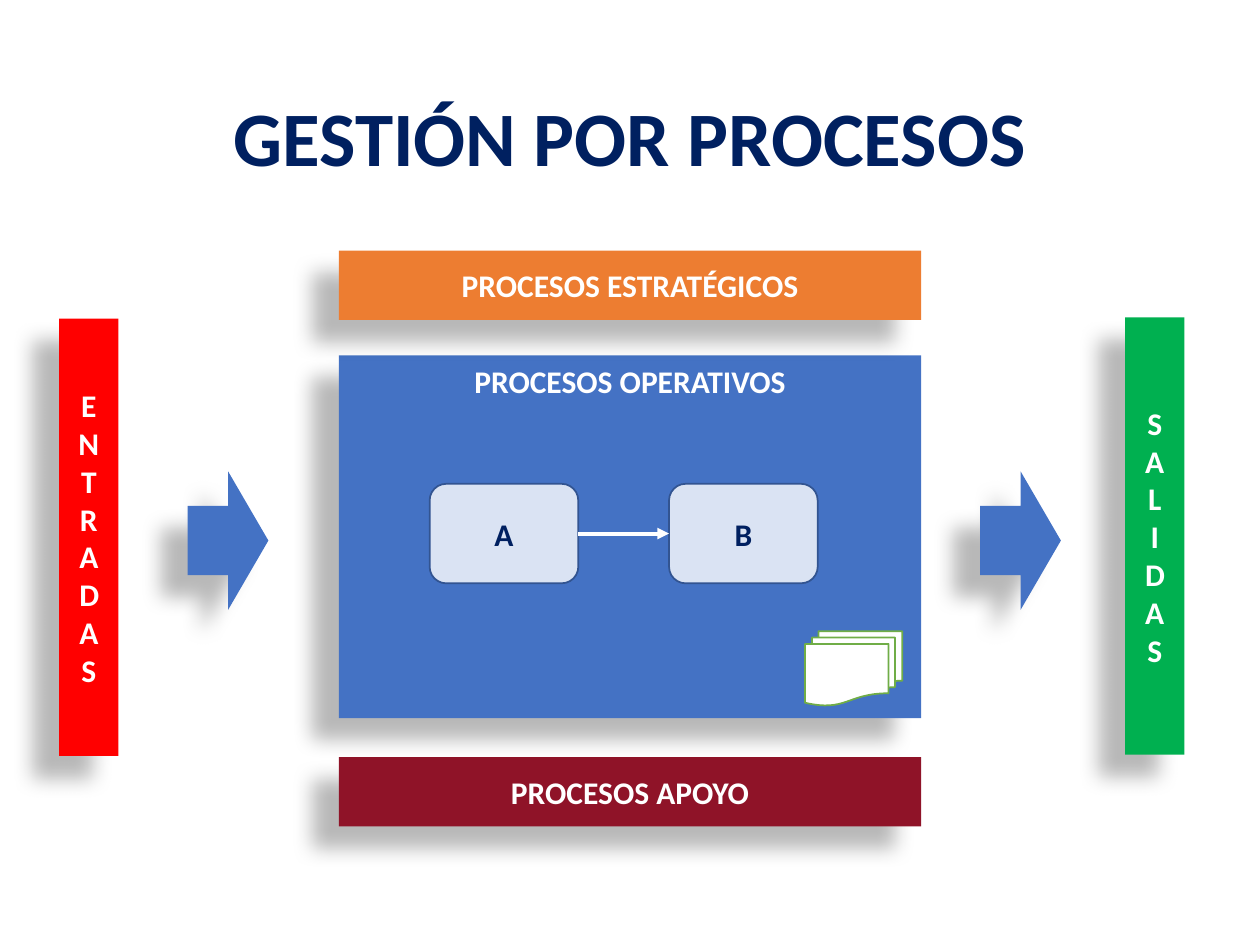
from pptx import Presentation
from pptx.dml.color import RGBColor
from pptx.enum.shapes import MSO_CONNECTOR, MSO_SHAPE as Shape
from pptx.enum.text import MSO_ANCHOR as Anchor, PP_ALIGN as Align
from pptx.oxml.ns import qn
from pptx.util import Inches, Pt
from lxml.etree import SubElement

THEME = {
    "font": "Calibri", "title_size": 44, "label_size": 18,
    "navy": "002060", "white": "FFFFFF", "blue": "4472C4", "orange": "ED7D31",
    "maroon": "8F1328", "red": "FF0000", "green": "00B050",
    "pale": "DAE3F3", "outline": "325491", "leaf": "70AD47", "shadow": "000000",
}
SHADOW = {"blurRad": Pt(11.8), "dist": Pt(19.7), "dir": 141 * 60000, "algn": "tl", "rotWithShape": 0}

presentation = Presentation()
presentation.slide_width, presentation.slide_height = Inches(10), Inches(7.5)
slide = presentation.slides.add_slide(presentation.slide_layouts[6])
COLUMN = presentation.slide_width / 100
ROW = presentation.slide_height / 100


def cells(left, top, width, height):
    return [round(n * unit) for n, unit in zip((left, top, width, height), (COLUMN, ROW) * 2)]


def write(shape, text, color, size="label_size", anchor=Anchor.MIDDLE):
    frame = shape.text_frame
    frame.word_wrap, frame.vertical_anchor = True, anchor
    paragraph = frame.paragraphs[0]
    paragraph.text, paragraph.alignment = text, Align.CENTER
    font = paragraph.runs[0].font
    for name, value in {"name": THEME["font"], "size": Pt(THEME[size]), "bold": True}.items():
        setattr(font, name, value)
    font.color.rgb = RGBColor.from_string(THEME[color])
    return paragraph


BAND_LEFT, BAND_WIDTH, BAND_HEIGHT = 26.9, 46.2, 7.33
ARROW_TOP, ARROW_WIDTH, ARROW_HEIGHT = 49.87, 6.4, 14.67
PILLAR_WIDTH, PILLAR_HEIGHT = 4.7, 46.27
blocks = [
    (Shape.RECTANGLE, (BAND_LEFT, 37.6, BAND_WIDTH, 38.4), "blue", "PROCESOS OPERATIVOS", Anchor.TOP, None),
    (Shape.RIGHT_ARROW, (14.9, ARROW_TOP, ARROW_WIDTH, ARROW_HEIGHT), "blue", "", None, None),
    (Shape.RIGHT_ARROW, (77.8, ARROW_TOP, ARROW_WIDTH, ARROW_HEIGHT), "blue", "", None, None),
    (Shape.RECTANGLE, (BAND_LEFT, 26.53, BAND_WIDTH, BAND_HEIGHT), "orange", "PROCESOS ESTRATÉGICOS", Anchor.MIDDLE, None),
    (Shape.RECTANGLE, (BAND_LEFT, 80.13, BAND_WIDTH, BAND_HEIGHT), "maroon", "PROCESOS APOYO", Anchor.MIDDLE, None),
    (Shape.RECTANGLE, (4.7, 33.73, PILLAR_WIDTH, PILLAR_HEIGHT), "red", "ENTRADAS", Anchor.MIDDLE, "wordArtVert"),
    (Shape.RECTANGLE, (89.3, 33.6, PILLAR_WIDTH, PILLAR_HEIGHT), "green", "SALIDAS", Anchor.MIDDLE, "wordArtVert"),
]
for kind, place, fill, text, anchor, direction in blocks:
    shape = slide.shapes.add_shape(kind, *cells(*place))
    shape.fill.solid()
    shape.fill.fore_color.rgb = RGBColor.from_string(THEME[fill])
    shape.line.fill.background()
    shape.shadow.inherit = False
    effects = shape._element.spPr.find(qn("a:effectLst"))
    outer = SubElement(effects, qn("a:outerShdw"), {key: str(value) for key, value in SHADOW.items()})
    tint = SubElement(outer, qn("a:srgbClr"), val=THEME["shadow"])
    SubElement(tint, qn("a:alpha"), val="28000")
    if text:
        write(shape, text, "white", anchor=anchor)
    if direction:
        shape.text_frame._txBody.bodyPr.set("vert", direction)

outlined = [
    (Shape.ROUNDED_RECTANGLE, (34.1, 51.2, 11.8, 10.53), "pale", "outline", "A"),
    (Shape.ROUNDED_RECTANGLE, (53.1, 51.2, 11.8, 10.53), "pale", "outline", "B"),
    (Shape.FLOWCHART_MULTIDOCUMENT, (63.9, 66.8, 7.7, 7.87), "white", "leaf", ""),
]
steps = []
for kind, place, fill, line, text in outlined:
    shape = slide.shapes.add_shape(kind, *cells(*place))
    shape.fill.solid()
    shape.fill.fore_color.rgb = RGBColor.from_string(THEME[fill])
    shape.line.color.rgb = RGBColor.from_string(THEME[line])
    shape.line.width = Pt(1)
    shape.shadow.inherit = False
    if text:
        write(shape, text, "navy")
        steps.append(shape)

connector = slide.shapes.add_connector(MSO_CONNECTOR.STRAIGHT, 0, 0, 0, 0)
connector.begin_connect(steps[0], 3)
connector.end_connect(steps[1], 1)
connector.line.color.rgb = RGBColor.from_string(THEME["white"])
connector.line.width = Pt(2.25)
SubElement(connector.line._get_or_add_ln(), qn("a:tailEnd"), type="triangle")
SubElement(connector._element.spPr, qn("a:effectLst"))

title = slide.shapes.add_textbox(*cells(6.9, 5.33, 86.2, 19.33))
write(title, "GESTIÓN POR PROCESOS", "navy", "title_size").line_spacing = 0.9

presentation.save("out.pptx")
